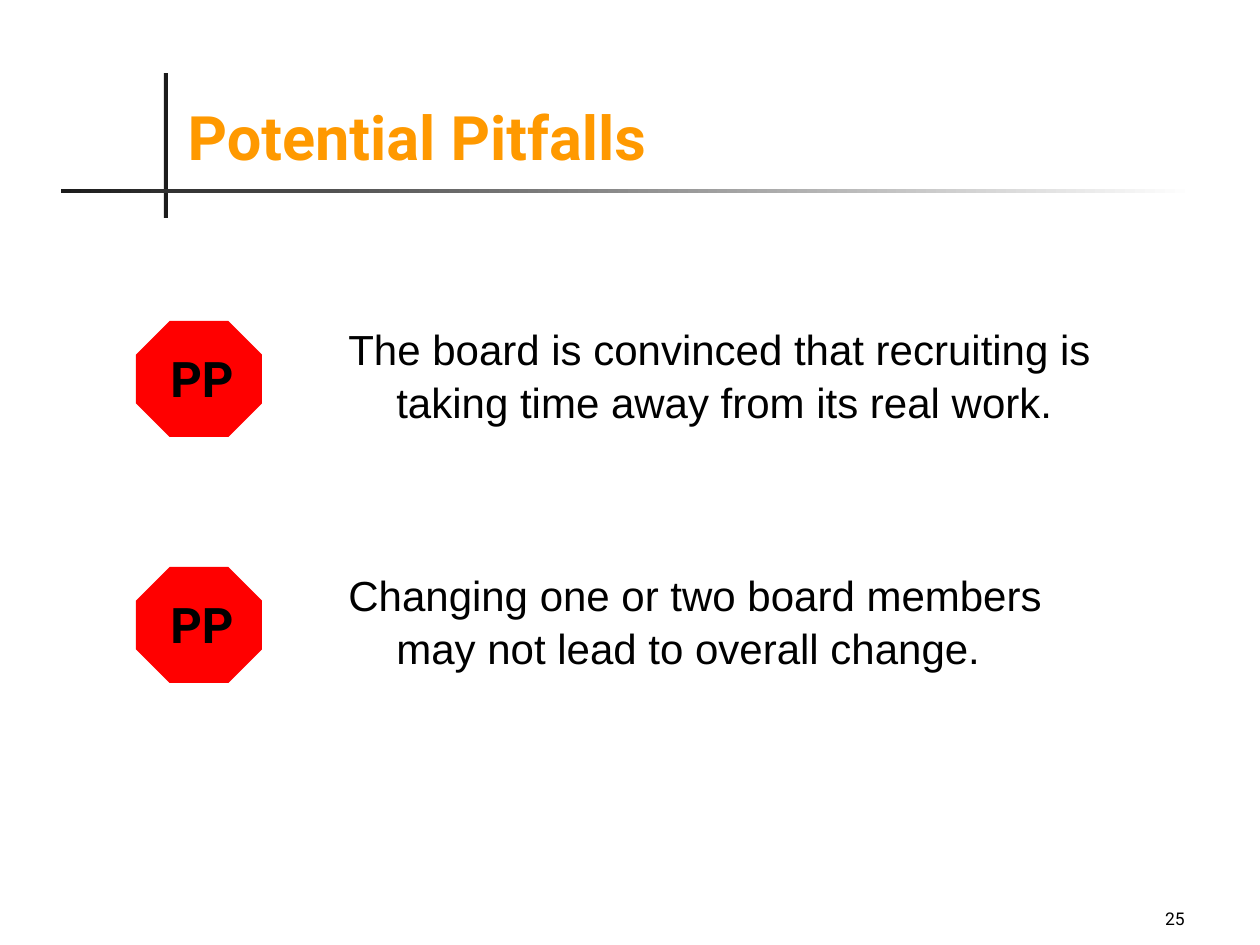
"""Build the Potential Pitfalls slide with its stop-sign warnings."""
from typing import NamedTuple

from pptx import Presentation
from pptx.dml.color import RGBColor
from pptx.enum.shapes import MSO_SHAPE
from pptx.enum.text import MSO_ANCHOR, PP_ALIGN
from pptx.util import Emu, Pt

BLACK = RGBColor(0x00, 0x00, 0x00)
INK = RGBColor(0x1C, 0x1C, 0x1C)
WHITE = RGBColor(0xFF, 0xFF, 0xFF)
ORANGE = RGBColor(0xFF, 0x99, 0x00)
RED = RGBColor(0xFF, 0x00, 0x00)

TITLE = dict(name="Roboto", size=Pt(35), bold=True, color=ORANGE)
BADGE = dict(name="Roboto", size=Pt(28), bold=True, color=BLACK)
BODY = dict(name="Arial", size=Pt(24), bold=False, color=BLACK)
NUMBER = dict(name="Roboto", size=Pt(10), bold=False, color=BLACK)


class Box(NamedTuple):
    x: int
    y: int
    w: int
    h: int


class Pitfall(NamedTuple):
    y: int
    text: str


PITFALLS = [
    Pitfall(321, "The board is convinced that recruiting is taking time away from its real work."),
    Pitfall(567, "Changing one or two board members may not lead to overall change."),
]


def px(n: int) -> Emu:
    """Turn pixels into EMU."""
    return Emu(round(n * 914400 / 126))


def write(sp, text: str, fmt: dict, align=PP_ALIGN.LEFT, anchor=MSO_ANCHOR.TOP,
          hang: int = 0, spacing: float = 1.0, wrap: bool = True) -> None:
    """Put one formatted paragraph in a shape."""
    tf = sp.text_frame
    tf.word_wrap, tf.vertical_anchor = wrap, anchor
    p = tf.paragraphs[0]
    p.alignment, p.line_spacing = align, spacing
    if hang:
        pPr = p._p.get_or_add_pPr()
        pPr.set("marL", str(px(hang)))
        pPr.set("indent", str(-px(hang)))
    r = p.add_run()
    r.text = text
    for key, value in fmt.items():
        if key == "color":
            r.font.color.rgb = value
        else:
            setattr(r.font, key, value)


def add_shape(s, kind, box: Box, color: RGBColor):
    """Add a filled shape without outline or shadow."""
    sp = s.shapes.add_shape(kind, *map(px, box))
    sp.shadow.inherit = False
    sp.fill.solid()
    sp.fill.fore_color.rgb = color
    sp.line.fill.background()
    return sp


def add_text(s, box: Box, text: str, fmt: dict, **layout) -> None:
    """Add a text box."""
    write(s.shapes.add_textbox(*map(px, box)), text, fmt, **layout)


def add_rules(s) -> None:
    """Draw the crossed rules beside and below the title."""
    add_shape(s, MSO_SHAPE.RECTANGLE, Box(164, 73, 4, 145), INK)
    fill = add_shape(s, MSO_SHAPE.RECTANGLE, Box(61, 189, 1134, 4), INK).fill
    fill.gradient()
    fill.gradient_angle = 0
    for stop, color in zip(fill.gradient_stops, (INK, WHITE)):
        stop.color.rgb = color


def add_title(s, text: str) -> None:
    """Place and format the title placeholder."""
    sp = s.shapes.title
    sp.left, sp.top, sp.width, sp.height = map(px, Box(175, 21, 1074, 158))
    write(sp, text, TITLE, anchor=MSO_ANCHOR.BOTTOM)


def add_pitfall(s, pitfall: Pitfall) -> None:
    """Draw a stop sign and its warning."""
    y = pitfall.y
    sign = add_shape(s, MSO_SHAPE.OCTAGON, Box(136, y, 126, 116), RED)
    sign.adjustments[0] = 0.29
    add_text(s, Box(158, y + 21, 94, 72), "PP", BADGE, hang=32, wrap=False)
    add_text(s, Box(336, y - 6, 809, 115), pitfall.text, BODY, hang=48, spacing=1.05)


def main() -> None:
    """Build and save the slide."""
    prs = Presentation()
    prs.slide_width, prs.slide_height = px(1260), px(945)
    s = prs.slides.add_slide(prs.slide_layouts[5])
    add_rules(s)
    add_title(s, "Potential Pitfalls")
    for pitfall in PITFALLS:
        add_pitfall(s, pitfall)
    add_text(s, Box(935, 872, 262, 63), "25", NUMBER,
             align=PP_ALIGN.RIGHT, anchor=MSO_ANCHOR.BOTTOM)
    prs.save("out.pptx")


if __name__ == "__main__":
    main()
